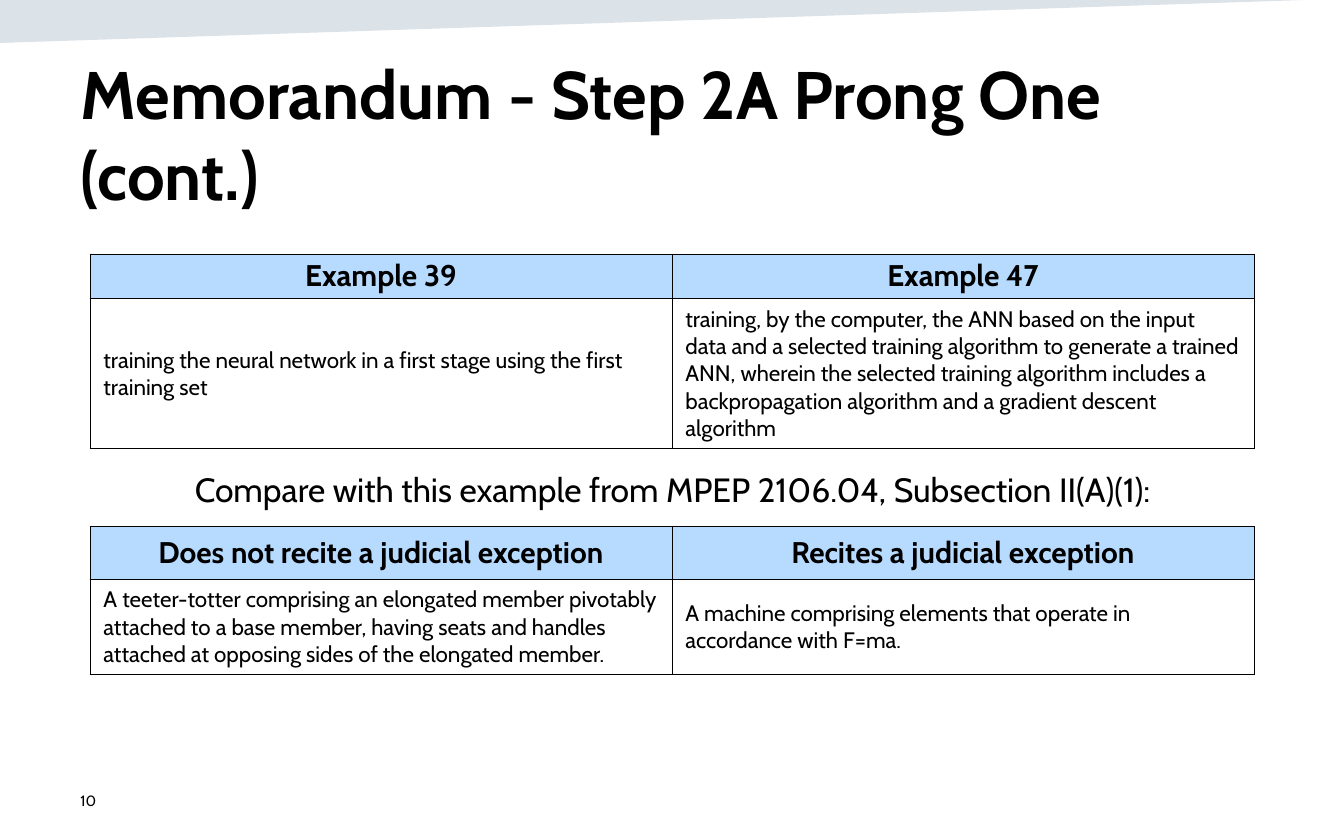
from lxml import etree
from pptx import Presentation
from pptx.dml.color import RGBColor
from pptx.enum.text import MSO_ANCHOR, PP_ALIGN
from pptx.oxml.ns import qn
from pptx.util import Pt

PX = 9144  # EMU per px, 100 px to the inch
FONT = "Cabin"
BLACK = RGBColor(0x00, 0x00, 0x00)
WHITE = RGBColor(0xFF, 0xFF, 0xFF)
HEADER = RGBColor(0xB7, 0xDB, 0xFF)
NAVY = RGBColor(0x16, 0x44, 0x69)
LEFT, CENTER = PP_ALIGN.LEFT, PP_ALIGN.CENTER
TOP, MIDDLE = MSO_ANCHOR.TOP, MSO_ANCHOR.MIDDLE


def write(tf, text, size=12, bold=False, align=LEFT):
    p = tf.paragraphs[0]
    p.alignment = align
    r = p.add_run()
    r.text = text
    r.font.name = FONT
    r.font.size = Pt(size)
    r.font.bold = bold
    r.font.color.rgb = BLACK


def add_borders(cell):
    tcPr = cell._tc.get_or_add_tcPr()
    for i, side in enumerate(("a:lnL", "a:lnR", "a:lnT", "a:lnB")):
        ln = etree.Element(qn(side), w=str(Pt(0.5)))
        fill = etree.SubElement(ln, qn("a:solidFill"))
        etree.SubElement(fill, qn("a:srgbClr"), val=str(BLACK))
        tcPr.insert(i, ln)


prs = Presentation()
prs.slide_width, prs.slide_height = 1000 * PX, 625 * PX
s = prs.slides.add_slide(prs.slide_layouts[5])

# Translucent wedge along the top edge
fb = s.shapes.build_freeform(0, 0, scale=PX)
fb.add_line_segments([(0, 32), (1002, -1)], close=True)
sp = fb.convert_to_shape()
sp.shadow.inherit = False
sp.line.fill.background()
sp.fill.solid()
sp.fill.fore_color.rgb = NAVY
color = sp._element.spPr.find(qn("a:solidFill"))[0]
etree.SubElement(color, qn("a:alpha"), val="15000")

# Title
title = s.shapes.title
title.left, title.top, title.width, title.height = 50 * PX, 34 * PX, 900 * PX, 104 * PX
title.text_frame.vertical_anchor = TOP
title.text_frame.word_wrap = True
write(title.text_frame, "Memorandum - Step 2A Prong One (cont.)", size=36, bold=True)

# Comparison tables: top, row heights, rows of text
tables = [
    (189, (33, 112), [
        ("Example 39", "Example 47"),
        ("training the neural network in a first stage using the first training set",
         "training, by the computer, the ANN based on the input data and a selected "
         "training algorithm to generate a trained ANN, wherein the selected training "
         "algorithm includes a backpropagation algorithm and a gradient descent algorithm"),
    ]),
    (392, (39, 70), [
        ("Does not recite a judicial exception", "Recites a judicial exception"),
        ("A teeter-totter comprising an elongated member pivotably attached to a base "
         "member, having seats and handles attached at opposing sides of the elongated member.",
         "A machine comprising elements that operate in accordance with F=ma."),
    ]),
]
for top, heights, rows in tables:
    table = s.shapes.add_table(2, 2, 67 * PX, top * PX, 866 * PX, sum(heights) * PX).table
    for i, texts in enumerate(rows):
        table.rows[i].height = heights[i] * PX
        head = i == 0
        for j, text in enumerate(texts):
            cell = table.cell(i, j)
            cell.vertical_anchor = MIDDLE
            if head:
                cell.margin_left = cell.margin_right = 6 * PX
                cell.margin_top = cell.margin_bottom = 3 * PX
            cell.fill.solid()
            cell.fill.fore_color.rgb = HEADER if head else WHITE
            write(cell.text_frame, text, size=16 if head else 12, bold=head,
                  align=CENTER if head else LEFT)
            add_borders(cell)

# Lead-in to the second table
tf = s.shapes.add_textbox(120 * PX, 344 * PX, 761 * PX, 40 * PX).text_frame
tf.word_wrap = False
write(tf, "Compare with this example from MPEP 2106.04, Subsection II(A)(1):",
      size=18, align=CENTER)

# Slide number
tf = s.shapes.add_textbox(50 * PX, 579 * PX, 225 * PX, 33 * PX).text_frame
tf.word_wrap = True
tf.vertical_anchor = MIDDLE
write(tf, "10", size=8)

prs.save("out.pptx")
